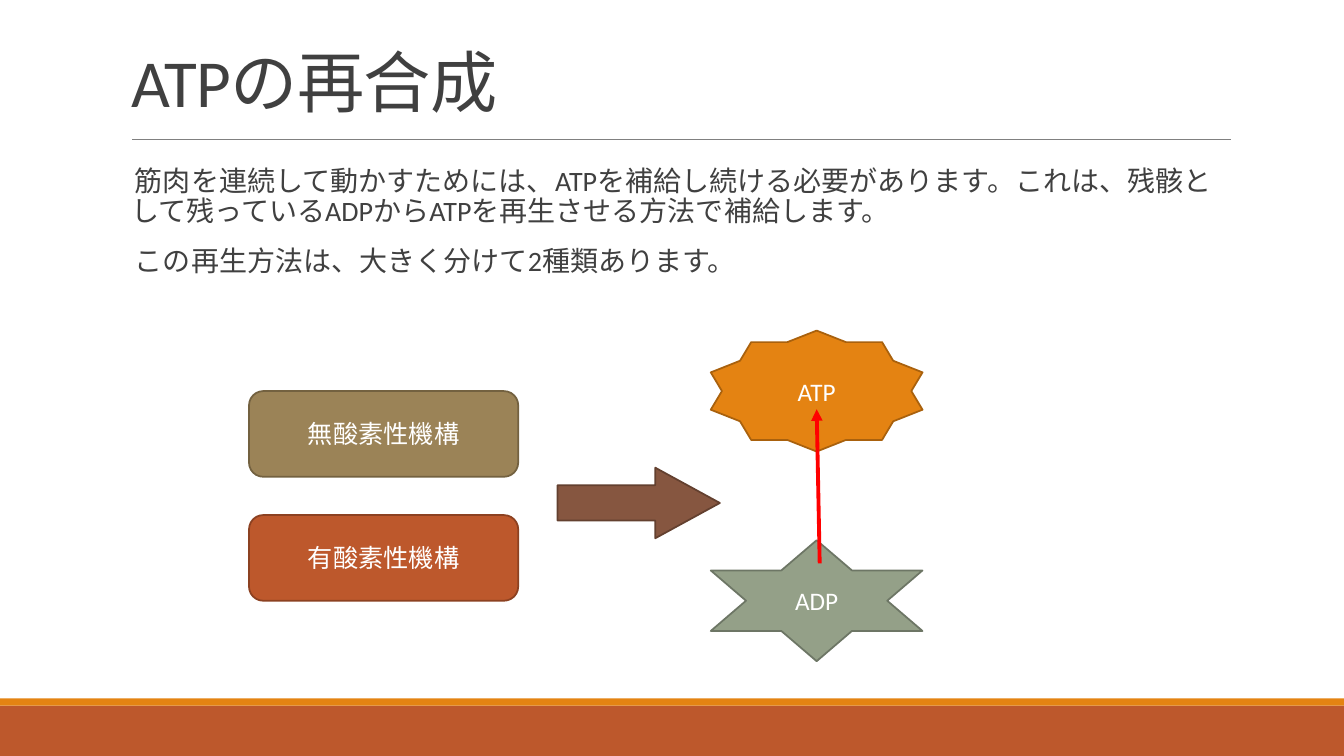
"""Build the slide on ATP resynthesis."""
from lxml.etree import SubElement
from pptx import Presentation
from pptx.dml.color import RGBColor
from pptx.enum.shapes import MSO_CONNECTOR, MSO_SHAPE
from pptx.enum.text import MSO_ANCHOR, MSO_AUTO_SIZE, PP_ALIGN
from pptx.oxml.ns import qn
from pptx.util import Inches, Pt

FONT = "Calibri"
INK, WHITE, ORANGE, RUST = "404040", "FFFFFF", "E48312", "BD582C"
TITLE = "ATPの再合成"
BODY = [
    "筋肉を連続して動かすためには、ATPを補給し続ける必要があります。"
    "これは、残骸として残っているADPからATPを再生させる方法で補給します。",
    "この再生方法は、大きく分けて2種類あります。",
]
BANDS = [(7, 0.5, RUST), (6.93, 0.07, ORANGE)]
MECHANISM_BOX, MOLECULE_BOX = (2.47, 2.67, 0.85), (7.05, 2.1, 1.2)
DIAGRAM = [
    ("ATP", MSO_SHAPE.STAR_10_POINT, MOLECULE_BOX, 3.28, ORANGE, "A9610D"),
    ("有酸素性機構", MSO_SHAPE.ROUNDED_RECTANGLE, MECHANISM_BOX, 5.11, RUST, "8C4121"),
    ("無酸素性機構", MSO_SHAPE.ROUNDED_RECTANGLE, MECHANISM_BOX, 3.88, "9B8357", "736140"),
    ("", MSO_SHAPE.RIGHT_ARROW, (5.53, 1.61, 0.7), 4.64, "865640", "63402F"),
    ("ADP", MSO_SHAPE.STAR_6_POINT, MOLECULE_BOX, 5.36, "94A088", "6D7665"),
]


def rgb(value):
    return RGBColor.from_string(value)


def style(paragraph, size, color, align=PP_ALIGN.LEFT):
    paragraph.alignment = align
    paragraph.font.name = FONT
    paragraph.font.size = Pt(size)
    paragraph.font.color.rgb = rgb(color)


def add_filled(slide, kind, left, top, width, height, fill, outline=None):
    shape = slide.shapes.add_shape(kind, *map(Inches, (left, top, width, height)))
    shape.shadow.inherit = False
    shape.fill.solid()
    shape.fill.fore_color.rgb = rgb(fill)
    if outline:
        shape.line.color.rgb = rgb(outline)
        shape.line.width = Pt(1.25)
    else:
        shape.line.fill.background()
    return shape


def add_line(slide, start, end, color, width):
    line = slide.shapes.add_connector(MSO_CONNECTOR.STRAIGHT, *map(Inches, start + end))
    line.line.color.rgb = rgb(color)
    line.line.width = Pt(width)
    SubElement(line._element.spPr, qn("a:effectLst"))
    return line


def add_title(slide):
    title = slide.shapes.title
    title.left, title.top, title.width, title.height = map(Inches, (1.2, 0.31, 11, 0.94))
    frame = title.text_frame
    frame.text = TITLE
    frame.auto_size = MSO_AUTO_SIZE.NONE
    frame.vertical_anchor = MSO_ANCHOR.BOTTOM
    heading = frame.paragraphs[0]
    heading.line_spacing = 0.85
    style(heading, 48, INK)
    heading.runs[0]._r.get_or_add_rPr().set("spc", "-50")


def add_body(slide):
    frame = slide.shapes.add_textbox(*map(Inches, (1.2, 1.61, 11, 5.2))).text_frame
    frame.word_wrap = True
    frame.margin_left = frame.margin_right = 0
    for index, sentence in enumerate(BODY):
        paragraph = frame.add_paragraph() if index else frame.paragraphs[0]
        paragraph.text = sentence
        properties = paragraph._p.get_or_add_pPr()
        properties.set("marL", str(Inches(0.1)))
        properties.set("indent", str(-Inches(0.1)))
        bullet_color = SubElement(properties, qn("a:buClr"))
        SubElement(bullet_color, qn("a:srgbClr"), val=ORANGE)
        SubElement(properties, qn("a:buChar"), char=" ")
        paragraph.line_spacing = 0.9
        paragraph.space_before = Pt(12 if index else 0)
        paragraph.space_after = Pt(2)
        style(paragraph, 20, INK)


def add_diagram(slide):
    for label, kind, (left, width, height), top, fill, outline in DIAGRAM:
        part = add_filled(slide, kind, left, top, width, height, fill, outline)
        if kind == MSO_SHAPE.RIGHT_ARROW:
            part.adjustments[1] = 0.915
        if label:
            part.text_frame.text = label
            part.text_frame.vertical_anchor = MSO_ANCHOR.MIDDLE
            style(part.text_frame.paragraphs[0], 18, WHITE, PP_ALIGN.CENTER)
    resynthesis = add_line(slide, (8.13, 5.59), (8.1, 4.06), "FF0000", 2.75)
    SubElement(resynthesis.line._get_or_add_ln(), qn("a:tailEnd"), type="triangle")


def main():
    deck = Presentation()
    deck.slide_width, deck.slide_height = Inches(13.33), Inches(7.5)
    slide = deck.slides.add_slide(deck.slide_layouts[5])
    for top, height, fill in BANDS:
        add_filled(slide, MSO_SHAPE.RECTANGLE, 0, top, 13.33, height, fill)
    add_line(slide, (1.31, 1.38), (12.21, 1.38), "808080", 0.5)
    add_title(slide)
    add_body(slide)
    add_diagram(slide)
    deck.save("out.pptx")


if __name__ == "__main__":
    main()
